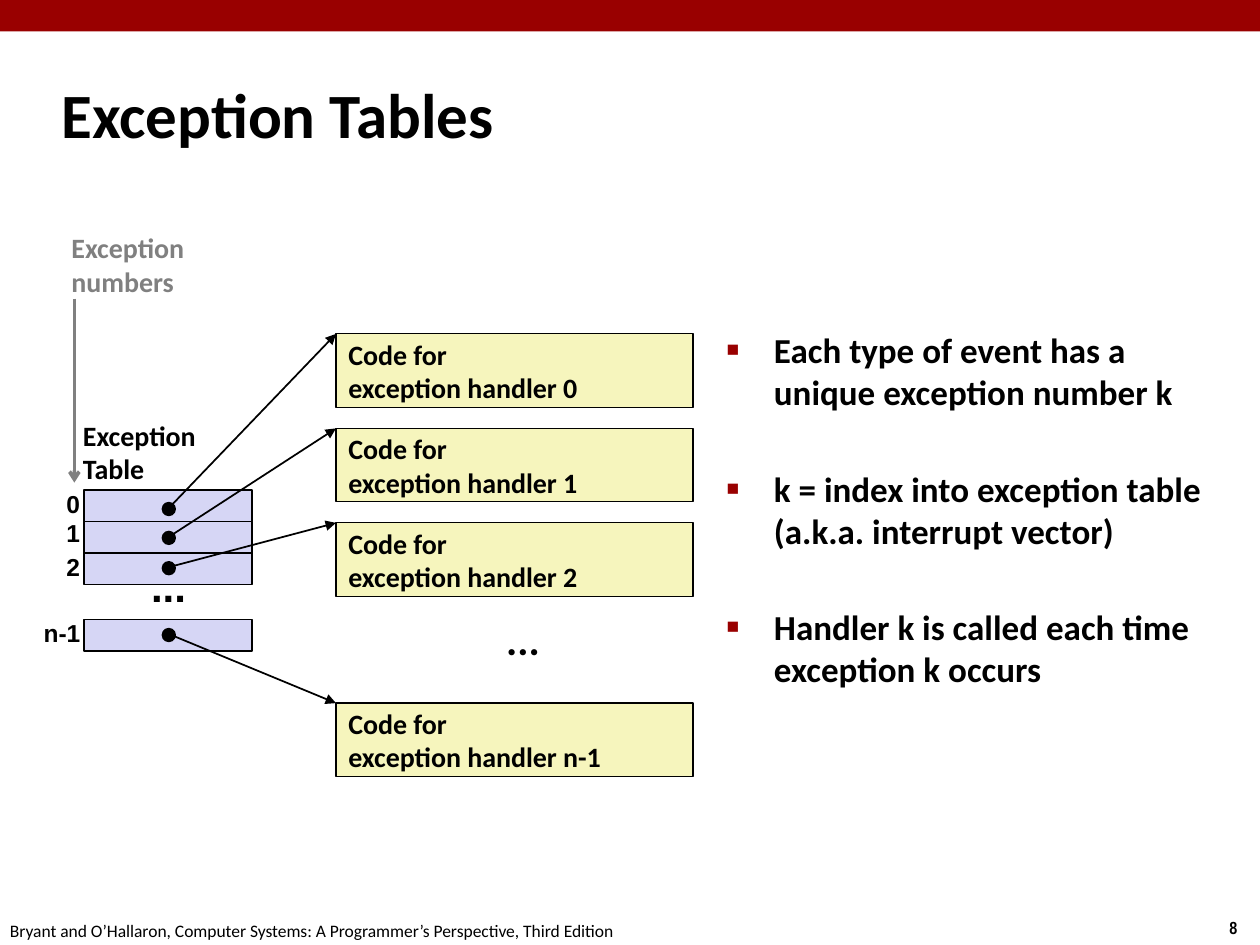
from pptx import Presentation
from pptx.dml.color import RGBColor
from pptx.enum.shapes import MSO_CONNECTOR as Conn, MSO_SHAPE as Form
from pptx.enum.text import MSO_ANCHOR as Anchor, PP_ALIGN as Align
from pptx.oxml.ns import qn
from pptx.util import Pt
from lxml.etree import SubElement

BLACK, GREY, RED = "000000", "808080", "990000"
LILAC, CREAM = "D6D6F5", "F6F5BD"


def tint(code):
    return RGBColor.from_string(code)


class Deck:
    """Hold the text style and the current slide, and draw elements in points."""

    def __init__(self, font="Calibri"):
        self.font = font
        self.file = Presentation()
        self.file.slide_width, self.file.slide_height = Pt(720), Pt(540)
        self.slide = self.file.slides.add_slide(self.file.slide_layouts[6])

    def words(self, para, text, size, color=BLACK, bold=True, font=None):
        para.alignment = Align.LEFT
        for i, line in enumerate(text.split("\n")):
            if i:
                para.add_line_break()
            run = para.add_run()
            run.text = line
            run.font.name = font or self.font
            run.font.size, run.font.bold = Pt(size), bold
            run.font.color.rgb = tint(color)

    def fill(self, frame, lines, size, anchor=Anchor.TOP, wrap=False, **look):
        frame.word_wrap, frame.vertical_anchor = wrap, anchor
        for i, line in enumerate(lines):
            para = frame.add_paragraph() if i else frame.paragraphs[0]
            self.words(para, line, size, **look)

    def text(self, box, lines, size, **look):
        frame = self.slide.shapes.add_textbox(*map(Pt, box)).text_frame
        self.fill(frame, lines, size, **look)
        return frame

    def shape(self, box, color, line=None, form=Form.RECTANGLE):
        item = self.slide.shapes.add_shape(form, *map(Pt, box))
        item.shadow.inherit = False
        item.fill.solid()
        item.fill.fore_color.rgb = tint(color)
        if line:
            item.line.color.rgb, item.line.width = tint(BLACK), Pt(line)
        else:
            item.line.fill.background()
        return item

    def arrow(self, start, end, color=BLACK, width=1, head="triangle"):
        item = self.slide.shapes.add_connector(
            Conn.STRAIGHT, *map(Pt, (*start, *end)))
        item.line.color.rgb, item.line.width = tint(color), Pt(width)
        props = item._element.spPr
        SubElement(props.find(qn("a:ln")), qn("a:tailEnd"), type=head)
        SubElement(props, qn("a:effectLst"))

    def list(self, box, items, size, gap, indent=27):
        frame = self.text(box, items, size, wrap=True)
        for i, para in enumerate(frame.paragraphs):
            para.space_before = Pt(gap if i else 0)
            props = para._p.get_or_add_pPr()
            props.set("marL", str(Pt(indent)))
            props.set("indent", str(-Pt(indent)))
            color = SubElement(props, qn("a:buClr"))
            SubElement(color, qn("a:srgbClr"), val=RED)
            SubElement(props, qn("a:buSzPct"), val="60000")
            SubElement(props, qn("a:buFont"), typeface="Arial")
            SubElement(props, qn("a:buChar"), char="■")


def main():
    deck = Deck()
    deck.shape((0, 0, 720, 18), RED)
    deck.text((695.5, 520.6, 24.5, 19.4), ["8"], 10, font="Arial Narrow")
    deck.text((-1.4, 522, 365.8, 19.4),
              ["Bryant and O’Hallaron, Computer Systems: "
               "A Programmer’s Perspective, Third Edition"], 10, bold=False)
    deck.text((28.1, 34.6, 597.6, 59.8), ["Exception Tables"], 36,
              anchor=Anchor.MIDDLE)
    deck.list((408.2, 184.3, 300.2, 253.4), [
        "Each type of event has a \nunique exception number k",
        "k = index into exception table \n(a.k.a. interrupt vector)",
        "Handler k is called each time \nexception k occurs"], 20, gap=31)

    entries = [
        ("0", 280, 275.8, 287.3, 190.8),
        ("1", 298, 292.3, 303.8, 244.8),
        ("2", 316, 311.8, 321.1, 298.8),
        ("n-1", 354, 349.9, 359.3, 401.8)]
    for name, row, label, _, code in entries:
        deck.shape((48, row, 96, 18), LILAC, 1)
        wide = 22.3 if len(name) == 1 else 35.3
        deck.text((53.1 - wide, label, wide, 23.8), [name], 14,
                  anchor=Anchor.MIDDLE, font="Arial")
        box = deck.shape((192, code, 204, 42), CREAM, 0.75)
        deck.fill(box.text_frame, ["Code for", f"exception handler {name}"],
                  16, anchor=Anchor.MIDDLE)
    for _, _, _, dot, code in entries:
        deck.shape((92.9, dot, 7.2, 7.2), BLACK, 1, Form.OVAL)
        deck.arrow((96.5, dot + 3), (192, code))

    for left, top, font in ((79.2, 316.8, "Arial"), (282.2, 347, "Calibri")):
        deck.text((left, top, 34.6, 36), ["..."], 24,
                  anchor=Anchor.MIDDLE, font=font)
    deck.text((40.3, 235.4, 79.9, 46.1), ["Exception", "Table"], 16)
    deck.text((33.8, 128.2, 83.5, 46.1), ["Exception", "numbers"], 16,
              color=GREY)
    deck.arrow((42.5, 170.6), (42.5, 275.8), GREY, 2, "arrow")
    deck.file.save("out.pptx")


if __name__ == "__main__":
    main()
